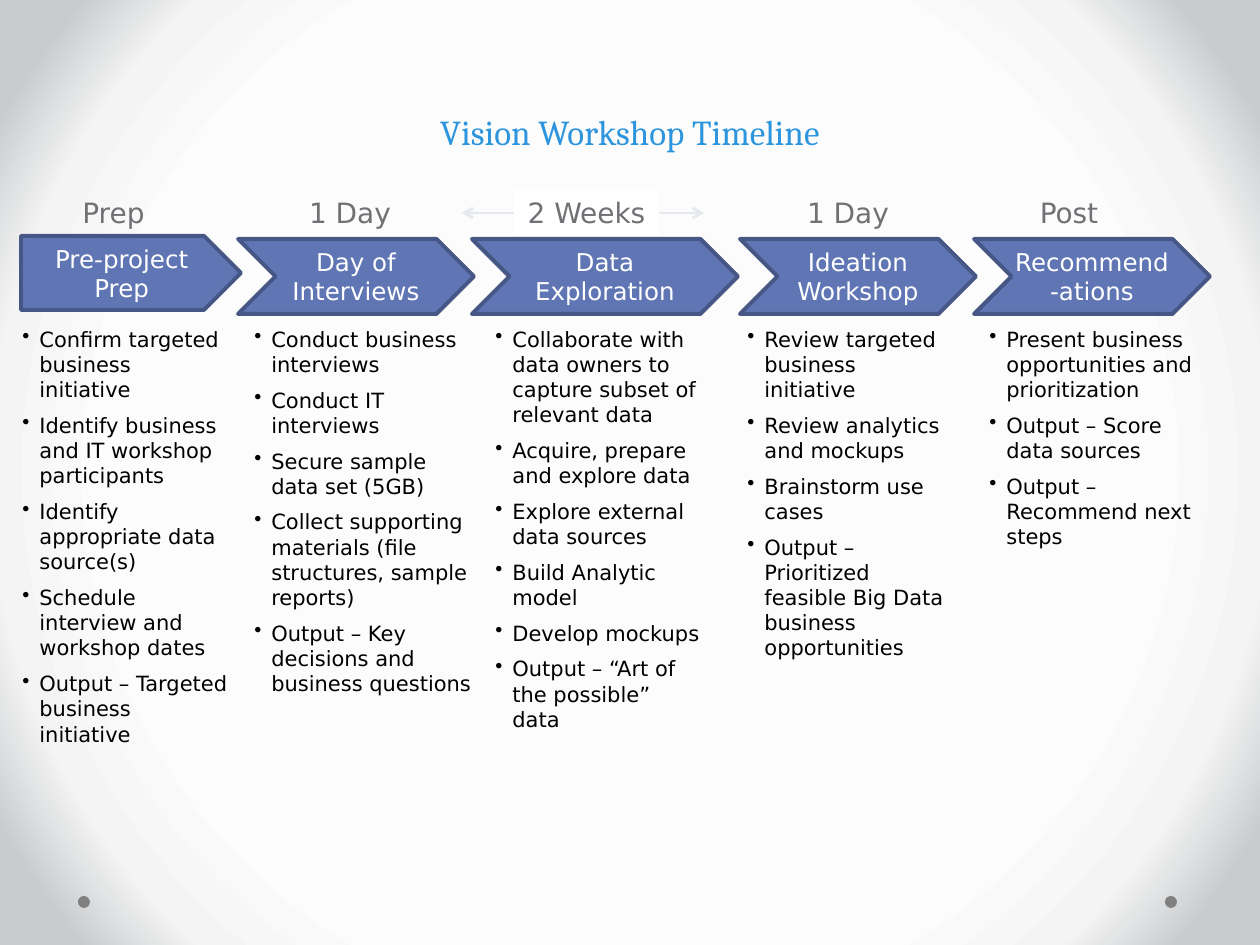
from dataclasses import dataclass

from lxml import etree
from pptx import Presentation, util as u
from pptx.dml.color import RGBColor
from pptx.enum import shapes, text
from pptx.oxml.ns import qn

KIND = shapes.MSO_SHAPE
ALIGN = text.PP_ALIGN
ANCHOR = text.MSO_ANCHOR


@dataclass(frozen=True)
class Theme:
    serif: str = "Cambria"
    sans: str = "DejaVu Sans"
    title: str = "2C95DD"
    label: str = "717074"
    body: str = "000000"
    white: str = "FFFFFF"
    step: str = "6076B4"
    edge: str = "475785"
    arrow: str = "E4E9EF"
    dot: str = "808080"
    glow: tuple = ((66, "FCFCFC"), (81, "F4F4F4"), (92, "C8CCCE"))
    title_size: int = 20
    label_size: int = 16
    step_size: int = 14
    body_size: int = 12


THEME = Theme()

# Each phase: label (text, left, width), step (text, left, top, width, height),
# list (left, width, height), items
PHASES = [
    (("Prep", 69, 89), ("Pre-project\vPrep", 21, 236, 220, 74), (10, 231, 411), [
        "Confirm targeted business initiative",
        "Identify business and IT workshop participants",
        "Identify appropriate data source(s)",
        "Schedule interview and workshop dates",
        "Output – Targeted business initiative"]),
    (("1 Day", 296, 108), ("Day of Interviews", 238, 239, 236, 75), (242, 242, 386), [
        "Conduct business interviews",
        "Conduct IT interviews",
        "Secure sample data set (5GB)",
        "Collect supporting materials (file structures, sample reports)",
        "Output – Key decisions and business questions"]),
    (("2 Weeks", 514, 145), ("Data Exploration", 472, 239, 266, 75), (483, 231, 422), [
        "Collaborate with data owners to capture subset of relevant data",
        "Acquire, prepare and explore data",
        "Explore external data sources",
        "Build Analytic model",
        "Develop mockups",
        "Output – “Art of the possible” data"]),
    (("1 Day", 794, 108), ("Ideation Workshop", 740, 239, 236, 75), (735, 231, 324), [
        "Review targeted business initiative",
        "Review analytics and mockups",
        "Brainstorm use cases",
        "Output – Prioritized feasible Big Data business opportunities"]),
    (("Post", 1027, 84), ("Recommend-ations", 974, 239, 236, 75), (977, 231, 237), [
        "Present business opportunities and prioritization",
        "Output – Score data sources",
        "Output – Recommend next steps"]),
]


def px(n):
    return u.Emu(round(n * 914400 / 126))


def rgb(code):
    return RGBColor.from_string(code)


def style(para, size, color, face=THEME.sans, align=ALIGN.CENTER):
    para.alignment = align
    font = para.font
    font.size, font.name = u.Pt(size), face
    font.color.rgb = rgb(color)


def add_glow(slide):
    """Fill the background with a gradient that spreads from the centre."""
    slide.background.fill.gradient()
    grad = next(slide.element.iter(qn("a:gradFill")))
    for child in list(grad):
        grad.remove(child)
    stops = etree.SubElement(grad, qn("a:gsLst"))
    for pos, code in THEME.glow:
        stop = etree.SubElement(stops, qn("a:gs"), pos=str(pos * 1000))
        etree.SubElement(stop, qn("a:srgbClr"), val=code)
    way = etree.SubElement(grad, qn("a:path"), path="circle")
    etree.SubElement(way, qn("a:fillToRect"),
                     {side: "50000" for side in "ltrb"})


def add_box(slide, words, left, top, width, height, wrap=True):
    box = slide.shapes.add_textbox(px(left), px(top), px(width), px(height))
    box.text_frame.word_wrap = wrap
    box.text_frame.text = words
    return box


def add_solid(slide, kind, left, top, width, height, color):
    shape = slide.shapes.add_shape(kind, px(left), px(top), px(width), px(height))
    shape.shadow.inherit = False
    shape.fill.solid()
    shape.fill.fore_color.rgb = rgb(color)
    shape.line.fill.background()
    return shape


def add_title(slide, words):
    frame = add_box(slide, words, 50, 116, 1160, 43).text_frame
    frame.vertical_anchor = ANCHOR.BOTTOM
    style(frame.paragraphs[0], THEME.title_size, THEME.title, THEME.serif)


def add_span(slide, left, right, y):
    """Draw a line with an open arrowhead at both ends."""
    line = slide.shapes.add_connector(shapes.MSO_CONNECTOR.STRAIGHT,
                                      px(left), px(y), px(right), px(y))
    line.line.color.rgb = rgb(THEME.arrow)
    line.line.width = u.Pt(1.5)
    for end in ("a:headEnd", "a:tailEnd"):
        etree.SubElement(line.line._get_or_add_ln(), qn(end), type="arrow")
    etree.SubElement(line.element.spPr, qn("a:effectLst"))


def add_label(slide, words, left, width):
    box = add_box(slide, words, left, 189, width, 47, wrap=False)
    style(box.text_frame.paragraphs[0], THEME.label_size, THEME.label)
    return box


def add_step(slide, kind, words, *place):
    shape = add_solid(slide, kind, *place, THEME.step)
    shape.line.color.rgb = rgb(THEME.edge)
    shape.line.width = u.Pt(2.25)
    frame = shape.text_frame
    frame.word_wrap = True
    frame.vertical_anchor = ANCHOR.MIDDLE
    frame.text = words
    style(frame.paragraphs[0], THEME.step_size, THEME.white)
    return shape


def add_list(slide, items, left, width, height):
    frame = add_box(slide, "\n".join(items), left, 320, width, height).text_frame
    for i, para in enumerate(frame.paragraphs):
        props = para._p.get_or_add_pPr()
        props.set("marL", str(px(17)))
        props.set("indent", str(-px(17)))
        etree.SubElement(props, qn("a:buChar"), char="•")
        para.space_before = u.Pt(6 if i else 0)
        style(para, THEME.body_size, THEME.body, align=ALIGN.LEFT)


def main():
    deck = Presentation()
    deck.slide_width, deck.slide_height = px(1260), px(945)
    slide = deck.slides.add_slide(deck.slide_layouts[6])
    add_glow(slide)
    for left in (78, 1165):
        add_solid(slide, KIND.OVAL, left, 896, 12, 12, THEME.dot)
    add_title(slide, "Vision Workshop Timeline")
    add_span(slide, 462, 704, 213)
    last = len(PHASES) - 1
    for i, (label, step, place, items) in enumerate(PHASES):
        tag = add_label(slide, *label)
        if label[0] == "2 Weeks":
            tag.fill.solid()
            tag.fill.fore_color.rgb = rgb(THEME.white)
        shape = add_step(slide, KIND.CHEVRON if i else KIND.PENTAGON, *step)
        if i == last:
            shape.text_frame.margin_left = shape.text_frame.margin_right = 0
        add_list(slide, items, *place)
    deck.save("out.pptx")


if __name__ == "__main__":
    main()
